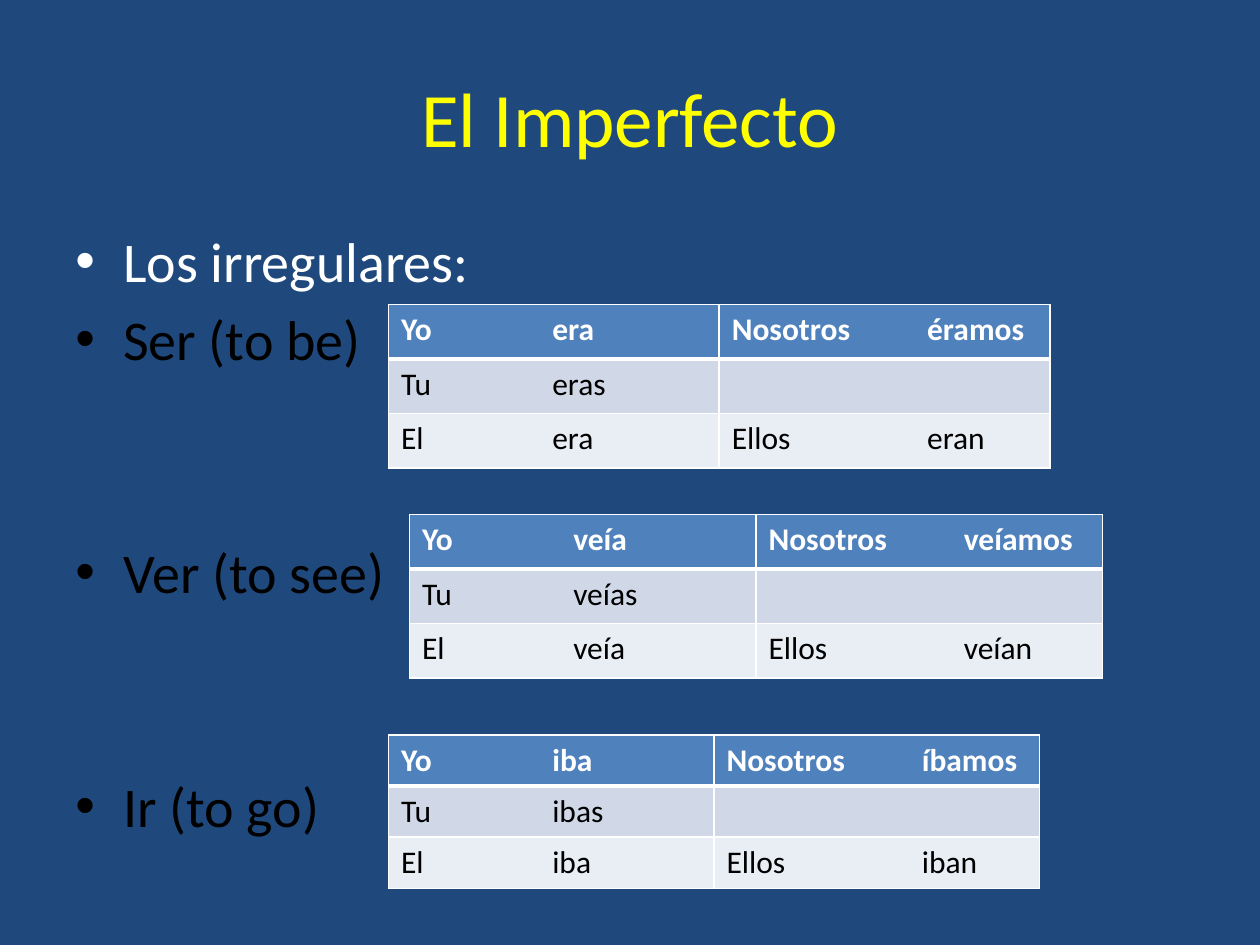
from pptx import Presentation
from pptx.dml.color import RGBColor
from pptx.enum.text import MSO_ANCHOR as Anchor, PP_ALIGN as Align
from pptx.oxml import parse_xml
from pptx.oxml.ns import nsdecls
from pptx.util import Inches, Pt

COLS, ROWS = 120, 90


def color(code):
    return RGBColor.from_string(code)


def node(tag, attrs="", body=""):
    return parse_xml(f"<a:{tag} {nsdecls('a')} {attrs}>{body}</a:{tag}>")


class Deck:
    """Draw styled elements on a slide divided into a grid of columns and rows."""

    face = "Calibri"
    back, gold, white, black = "1F497D", "FFFF00", "FFFFFF", "000000"
    fills = "4F81BD", "D0D8E8", "E9EDF4"
    rules = 1, 3, 1, 1
    stops = 1.2, 1.55

    def __init__(self):
        self.prs = Presentation()
        self.prs.slide_width, self.prs.slide_height = Inches(10), Inches(7.5)
        self.slide = self.prs.slides.add_slide(self.prs.slide_layouts[6])
        fill = self.slide.background.fill
        fill.solid()
        fill.fore_color.rgb = color(self.back)

    def place(self, x, y, w, h):
        dx, dy = self.prs.slide_width / COLS, self.prs.slide_height / ROWS
        return [int(n) for n in (x * dx, y * dy, w * dx, h * dy)]

    def font(self, para, size, tint, bold=False):
        font = para.font
        font.name, font.size, font.bold = self.face, Pt(size), bold
        font.color.rgb = color(tint)

    def frame(self, *area):
        frame = self.slide.shapes.add_textbox(*self.place(*area)).text_frame
        frame.word_wrap = True
        return frame

    def title(self, text, *area):
        frame = self.frame(*area)
        frame.vertical_anchor = Anchor.MIDDLE
        para = frame.paragraphs[0]
        para.text, para.alignment = text, Align.CENTER
        self.font(para, 44, self.gold)

    def list(self, items, *area):
        frame = self.frame(*area)
        for i, (text, gap, tint) in enumerate(items):
            para = frame.add_paragraph() if i else frame.paragraphs[0]
            para.text, para.space_before = text, Pt(gap)
            props = para._p.get_or_add_pPr()
            props.set("marL", str(Inches(0.38)))
            props.set("indent", str(Inches(-0.38)))
            props.append(node("buFont", 'typeface="Arial"'))
            props.append(node("buChar", 'char="•"'))
            self.font(para, 32, tint)

    def cell(self, cell, text, row, col):
        props = cell._tc.get_or_add_tcPr()
        line = f'<a:solidFill><a:srgbClr val="{self.white}"/></a:solidFill>'
        widths = 1, 1, self.rules[row], self.rules[row + 1]
        for side, width in zip("LRTB", widths):
            props.append(node(f"ln{side}", f'w="{Pt(width)}"', line))
        cell.fill.solid()
        cell.fill.fore_color.rgb = color(self.fills[row])
        para = cell.text_frame.paragraphs[0]
        para.text = text
        stop = f'<a:tab pos="{Inches(self.stops[col])}" algn="l"/>'
        para._p.get_or_add_pPr().append(node("tabLst", "", stop))
        self.font(para, 18, self.black if row else self.white, row == 0)

    def table(self, forms, *area):
        yo, tu, el, nos, ellos = forms
        grid = ((f"Yo\t{yo}", f"Nosotros\t{nos}"),
                (f"Tu\t{tu}", ""),
                (f"El\t{el}", f"Ellos\t{ellos}"))
        table = self.slide.shapes.add_table(3, 2, *self.place(*area)).table
        for r, line in enumerate(grid):
            for c, text in enumerate(line):
                self.cell(table.cell(r, c), text, r, c)


def main():
    deck = Deck()
    deck.title("El Imperfecto", 6, 3.6, 108, 15)
    deck.list((("Los irregulares:", 0, deck.white),
               ("Ser (to be)", 6, deck.black),
               ("Ver (to see)", 95, deck.black),
               ("Ir (to go)", 95, deck.black)), 6, 21, 108, 59.4)
    deck.table(("era", "eras", "era", "éramos", "eran"), 37, 29, 63, 15.6)
    deck.table(("veía", "veías", "veía", "veíamos", "veían"), 39, 49, 66, 15.6)
    deck.table(("iba", "ibas", "iba", "íbamos", "iban"), 37, 70, 62, 14.6)
    deck.prs.save("out.pptx")


if __name__ == "__main__":
    main()
